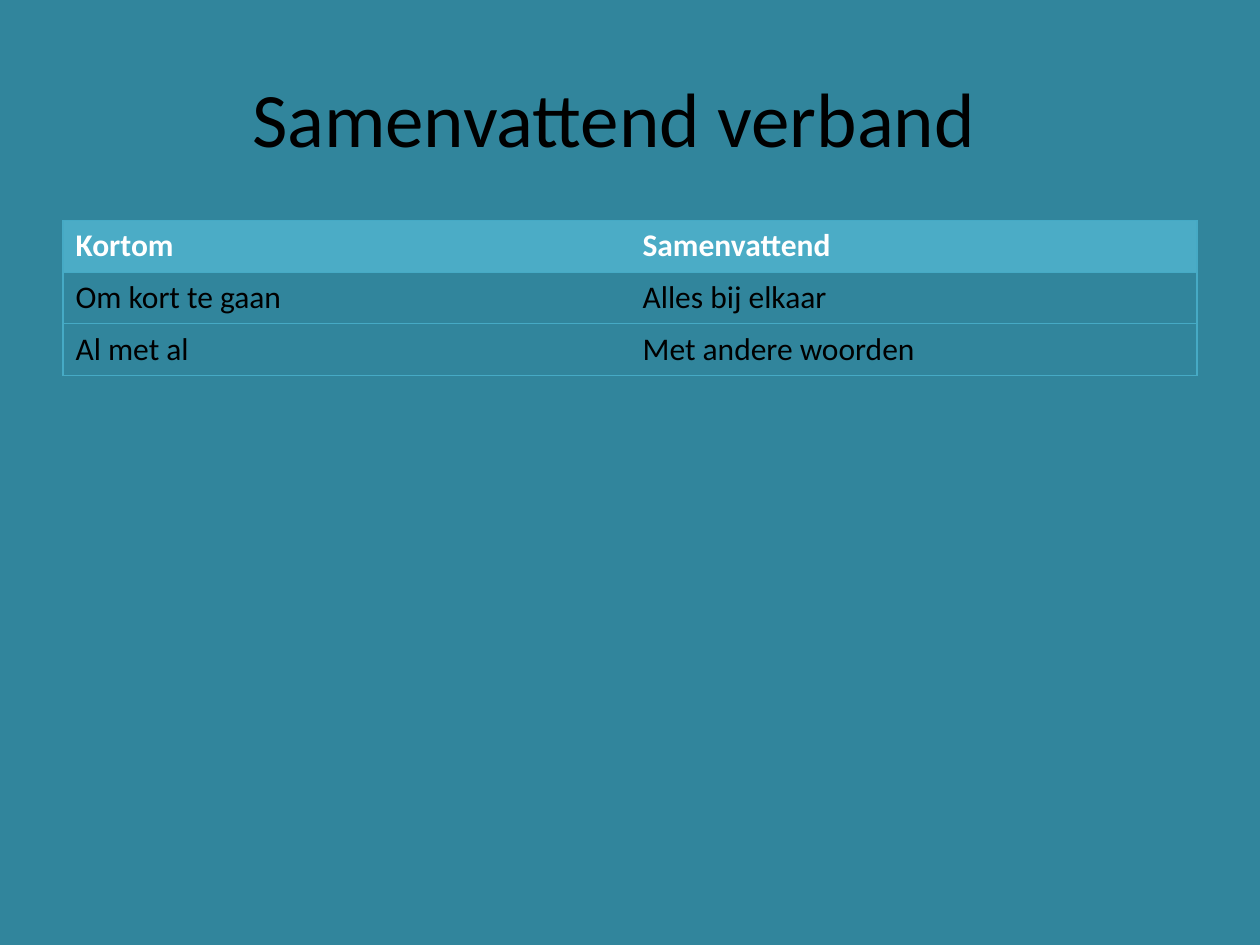
import pptx
import pptx.dml.color
import pptx.enum.text
import pptx.oxml
import pptx.oxml.ns
import pptx.util
from pptx.dml.color import RGBColor
from pptx.util import Inches

BACKGROUND = RGBColor(0x31, 0x85, 0x9C)
HEADER_FILL = RGBColor(0x4B, 0xAC, 0xC6)
BORDER = RGBColor(0x46, 0xAA, 0xC5)
BLACK = RGBColor(0, 0, 0)
WHITE = RGBColor(0xFF, 0xFF, 0xFF)

FONT = "Calibri"
ROWS = [
    ("Kortom", "Samenvattend"),
    ("Om kort te gaan", "Alles bij elkaar"),
    ("Al met al", "Met andere woorden"),
]


def add_span(para, text, size, color, bold=False):
    span = para.add_run()
    span.text = text
    span.font.name = FONT
    span.font.size = pptx.util.Pt(size)
    span.font.bold = bold
    span.font.color.rgb = color


def set_borders(cell, visible_sides):
    """Draw the named sides (L, R, T, B) and hide the others; call before filling."""
    properties = cell._tc.get_or_add_tcPr()
    for side in "LRTB":
        if side in visible_sides:
            paint = f'<a:solidFill><a:srgbClr val="{BORDER}"/></a:solidFill>'
        else:
            paint = "<a:noFill/>"
        properties.append(pptx.oxml.parse_xml(
            f'<a:ln{side} {pptx.oxml.ns.nsdecls("a")} w="{pptx.util.Pt(0.75)}">'
            f"{paint}</a:ln{side}>"
        ))


def add_title(page, text):
    title = page.shapes.title
    title.left, title.top = Inches(0.5), Inches(0.3)
    title.width, title.height = Inches(9), Inches(1.25)
    frame = title.text_frame
    frame.vertical_anchor = pptx.enum.text.MSO_ANCHOR.MIDDLE
    para = frame.paragraphs[0]
    para.alignment = pptx.enum.text.PP_ALIGN.CENTER
    add_span(para, text, 44, BLACK)


def add_word_table(page, rows):
    column_count = len(rows[0])
    row_height = Inches(0.41)
    table = page.shapes.add_table(
        len(rows), column_count, Inches(0.5), Inches(1.75),
        Inches(9), row_height * len(rows),
    ).table
    for row_index, words in enumerate(rows):
        table.rows[row_index].height = row_height
        is_header = row_index == 0
        for column_index, word in enumerate(words):
            cell = table.cell(row_index, column_index)
            outer_side = "L" if column_index == 0 else "R"
            set_borders(cell, "TB" + outer_side)
            if is_header:
                cell.fill.solid()
                cell.fill.fore_color.rgb = HEADER_FILL
            else:
                cell.fill.background()
            add_span(cell.text_frame.paragraphs[0], word, 18,
                     WHITE if is_header else BLACK, is_header)


def main():
    deck = pptx.Presentation()
    deck.slide_width, deck.slide_height = Inches(10), Inches(7.5)
    page = deck.slides.add_slide(deck.slide_layouts[5])
    page.background.fill.solid()
    page.background.fill.fore_color.rgb = BACKGROUND
    add_title(page, "Samenvattend verband\t")
    add_word_table(page, ROWS)
    deck.save("out.pptx")


if __name__ == "__main__":
    main()
